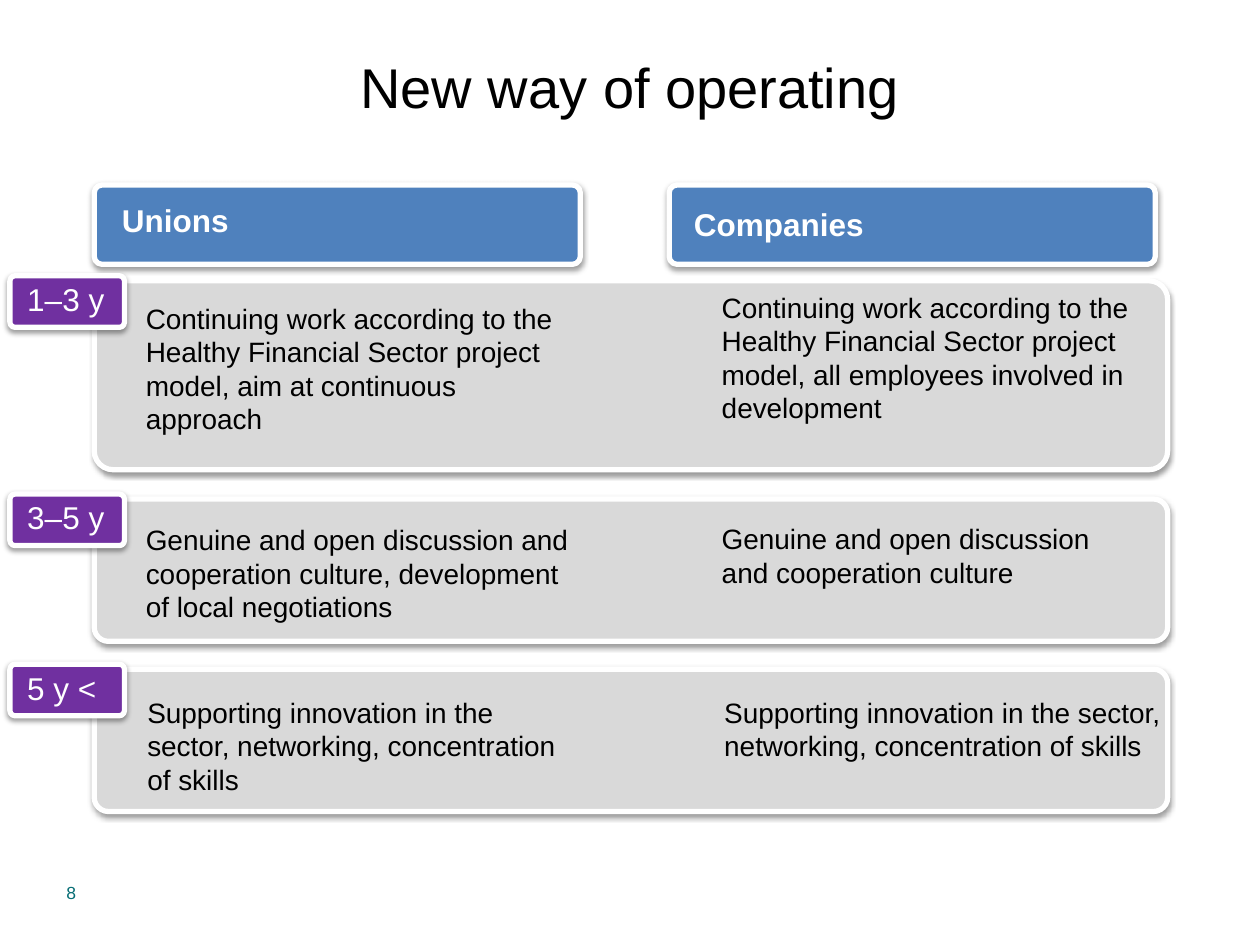
from lxml import etree
from pptx import Presentation
from pptx import util as u
from pptx.dml.color import RGBColor
from pptx.enum import shapes, text
from pptx.oxml import ns

Cm = u.Cm
FONT = "Arial"
BLACK, WHITE, GRAY = "000000", "FFFFFF", "D9D9D9"
BLUE, PURPLE, TEAL = "4F81BD", "7030A0", "076E75"
NORMAL_INSETS, TIGHT_INSETS = (0.25, 0.13), (0.1, 0.1)

TITLE = "New way of operating"
PAGE_NUMBER = "8"

# Heading, card left, text box (left, top, width, height)
HEADINGS = [
    ("Unions", 1.9, (2.36, 3.73, 6.81, 1.5)),
    ("Companies", 13.49, (13.89, 3.81, 6.6, 1.5)),
]

# Each period has a panel and one (wording, text box) pair per heading
PERIODS = [
    dict(label="1–3 y", top=5.66, height=3.81, insets=NORMAL_INSETS, entries=[
        ("Continuing work according to the Healthy Financial Sector project "
         "model, aim at continuous approach", (2.69, 5.94, 9.02, 3)),
        ("Continuing work according to the Healthy Financial Sector project "
         "model, all employees involved in development", (14.3, 5.72, 9.4, 3)),
    ]),
    dict(label="3–5 y", top=10.06, height=2.87, insets=NORMAL_INSETS, entries=[
        ("Genuine and open discussion and cooperation culture, development "
         "of local negotiations", (2.69, 10.41, 9.02, 2.31)),
        ("Genuine and open discussion and cooperation culture",
         (14.3, 10.39, 8.79, 1.63)),
    ]),
    dict(label="5 y <", top=13.49, height=2.87, insets=TIGHT_INSETS, entries=[
        ("Supporting innovation in the sector, networking, concentration of skills",
         (2.87, 13.92, 8.81, 3.2)),
        ("Supporting innovation in the sector, networking, concentration of skills",
         (14.5, 13.92, 9.19, 3.2)),
    ]),
]

PANEL_LEFT, PANEL_WIDTH = 1.9, 21.64
CARD_TOP, CARD_WIDTH, CARD_HEIGHT = 3.73, 9.8, 1.6
TAG_LEFT, TAG_RISE, TAG_WIDTH, TAG_HEIGHT = 0.2, 0.1, 2.31, 1.04


def color(value):
    return RGBColor.from_string(value)


def add_soft_shadow(shape):
    """Give the shape a faint shadow that falls straight down."""
    shape.shadow.inherit = False
    effects = shape._element.spPr.find(ns.qn("a:effectLst"))
    shadow = etree.SubElement(
        effects, ns.qn("a:outerShdw"), blurRad=str(u.Pt(3.1)),
        dist=str(u.Pt(1.6)), dir="5400000", rotWithShape="0")
    shade = etree.SubElement(shadow, ns.qn("a:srgbClr"), val=BLACK)
    etree.SubElement(shade, ns.qn("a:alpha"), val="38000")


def add_card(parent, box, fill):
    """Add a rounded card with a white rim and a shadow."""
    card = parent.add_shape(shapes.MSO_SHAPE.ROUNDED_RECTANGLE, *map(Cm, box))
    card.adjustments[0] = 0.1
    card.fill.solid()
    card.fill.fore_color.rgb = color(fill)
    card.line.color.rgb = color(WHITE)
    card.line.width = u.Pt(3)
    add_soft_shadow(card)


def add_text(parent, box, wording, size, font_color, insets=NORMAL_INSETS,
             bold=False, middle=False, wrap=True):
    text_box = parent.add_textbox(*map(Cm, box))
    frame = text_box.text_frame
    frame.text = wording
    frame.word_wrap = wrap
    frame.margin_left = frame.margin_right = Cm(insets[0])
    frame.margin_top = frame.margin_bottom = Cm(insets[1])
    if middle:
        frame.vertical_anchor = text.MSO_ANCHOR.MIDDLE
    paragraph = frame.paragraphs[0]
    font = paragraph.runs[0].font
    font.name, font.size, font.bold = FONT, u.Pt(size), bold
    font.color.rgb = color(font_color)
    return paragraph


def add_tag(parent, label, top):
    """Add a period tag as a group of card and label."""
    group = parent.add_group_shape().shapes
    add_card(group, (TAG_LEFT, top, TAG_WIDTH, TAG_HEIGHT), PURPLE)
    add_text(group, (0.3, top - 0.04, 2.08, 1.02), label, 18, WHITE, wrap=False)


def main():
    presentation = Presentation()
    presentation.slide_width, presentation.slide_height = Cm(25.4), Cm(19.05)
    slide = presentation.slides.add_slide(presentation.slide_layouts[6])
    parent = slide.shapes

    title = add_text(parent, (1.27, 0.15, 22.86, 3.18), TITLE, 32, BLACK, middle=True)
    title.alignment = text.PP_ALIGN.CENTER

    for heading, left, box in HEADINGS:
        add_card(parent, (left, CARD_TOP, CARD_WIDTH, CARD_HEIGHT), BLUE)
        paragraph = add_text(parent, box, heading, 18, WHITE, TIGHT_INSETS,
                             bold=True, middle=True)
        paragraph.line_spacing = 0.9

    for period in PERIODS:
        top = period["top"]
        add_card(parent, (PANEL_LEFT, top, PANEL_WIDTH, period["height"]), GRAY)
        for wording, box in period["entries"]:
            add_text(parent, box, wording, 16, BLACK, period["insets"])
        add_tag(parent, period["label"], top - TAG_RISE)

    add_text(parent, (1.09, 17.65, 5.92, 1.02), PAGE_NUMBER, 10, TEAL)
    presentation.save("out.pptx")


if __name__ == "__main__":
    main()
